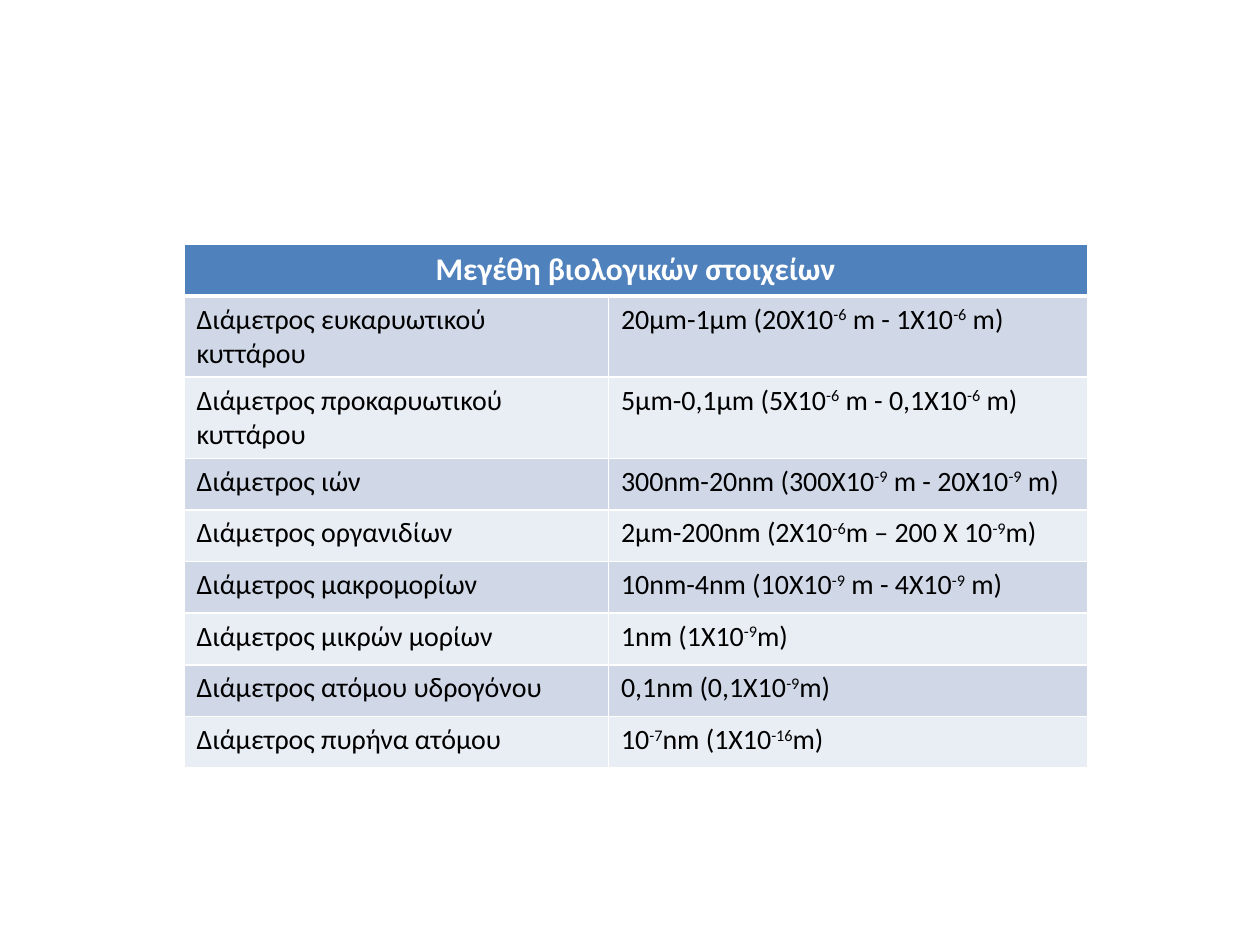
from lxml.etree import SubElement
from pptx import Presentation
from pptx.dml.color import RGBColor
from pptx.enum.text import PP_ALIGN
from pptx.oxml.ns import qn
from pptx.util import Inches, Pt

WIDE, HIGH = 10, 7.5
LEFT, TOP = 1.46, 1.94
COLS = (3.37, 3.8)
ROW = 0.41
BANDS = ("D0D8E8", "E9EDF4")
HEAD = "Μεγέθη βιολογικών στοιχείων"
# Carets enclose exponents.
SIZES = [
    ("Διάμετρος ευκαρυωτικού κυττάρου", "20μm-1μm (20X10^-6^ m - 1X10^-6^ m)"),
    ("Διάμετρος προκαρυωτικού κυττάρου", "5μm-0,1μm (5X10^-6^ m - 0,1X10^-6^ m)"),
    ("Διάμετρος ιών", "300nm-20nm (300X10^-9^ m - 20X10^-9^ m)"),
    ("Διάμετρος οργανιδίων", "2μm-200nm (2X10^-6^m – 200 X 10^-9^m)"),
    ("Διάμετρος μακρομορίων", "10nm-4nm (10X10^-9^ m - 4X10^-9^ m)"),
    ("Διάμετρος μικρών μορίων", "1nm (1X10^-9^m)"),
    ("Διάμετρος ατόμου υδρογόνου", "0,1nm (0,1X10^-9^m)"),
    ("Διάμετρος πυρήνα ατόμου", "10^-7^nm (1X10^-16^m)"),
]
TITLE = {"size": Pt(18), "bold": True, "name": "Calibri"}
BODY = {"size": Pt(16), "bold": False, "name": "Calibri"}


def paint(target, color):
    """Give a fill or a font a solid colour."""
    if hasattr(target, "solid"):
        target.solid()
        target.fore_color.rgb = RGBColor.from_string(color)
    else:
        target.color.rgb = RGBColor.from_string(color)


def edge(cell, base):
    """Draw white cell borders, with the bottom one base points wide."""
    props = cell._tc.get_or_add_tcPr()
    for side, width in zip("LRTB", (1, 1, 1, base)):
        line = SubElement(props, qn(f"a:ln{side}"), w=str(Pt(width)))
        fill = SubElement(line, qn("a:solidFill"))
        SubElement(fill, qn("a:srgbClr"), val="FFFFFF")


def write(cell, text, form, color):
    """Write text, raising the parts between carets."""
    para = cell.text_frame.paragraphs[0]
    for i, part in enumerate(text.split("^")):
        run = para.add_run()
        run.text = part
        for key, value in form.items():
            setattr(run.font, key, value)
        paint(run.font, color)
        if i % 2:
            run.font._element.set("baseline", "30000")
    return para


def style(cell, fill, base=1):
    edge(cell, base)
    paint(cell.fill, fill)


def add_grid(slide):
    rows = len(SIZES) + 1
    table = slide.shapes.add_table(
        rows, len(COLS), Inches(LEFT), Inches(TOP),
        Inches(sum(COLS)), Inches(ROW * rows)).table
    table.first_row = table.horz_banding = False
    for col, width in zip(table.columns, COLS):
        col.width = Inches(width)
    for row in table.rows:
        row.height = Inches(ROW)
    return table


def fill_head(table):
    first, last = table.rows[0].cells
    first.merge(last)
    for cell in (first, last):
        style(cell, "4F81BD", 3)
    write(first, HEAD, TITLE, "FFFFFF").alignment = PP_ALIGN.CENTER


def fill_body(table):
    for i, pair in enumerate(SIZES):
        for j, text in enumerate(pair):
            cell = table.cell(i + 1, j)
            style(cell, BANDS[i % 2])
            write(cell, text, BODY, "000000")


def main():
    deck = Presentation()
    deck.slide_width, deck.slide_height = Inches(WIDE), Inches(HIGH)
    slide = deck.slides.add_slide(deck.slide_layouts[6])
    table = add_grid(slide)
    fill_head(table)
    fill_body(table)
    deck.save("out.pptx")


if __name__ == "__main__":
    main()
